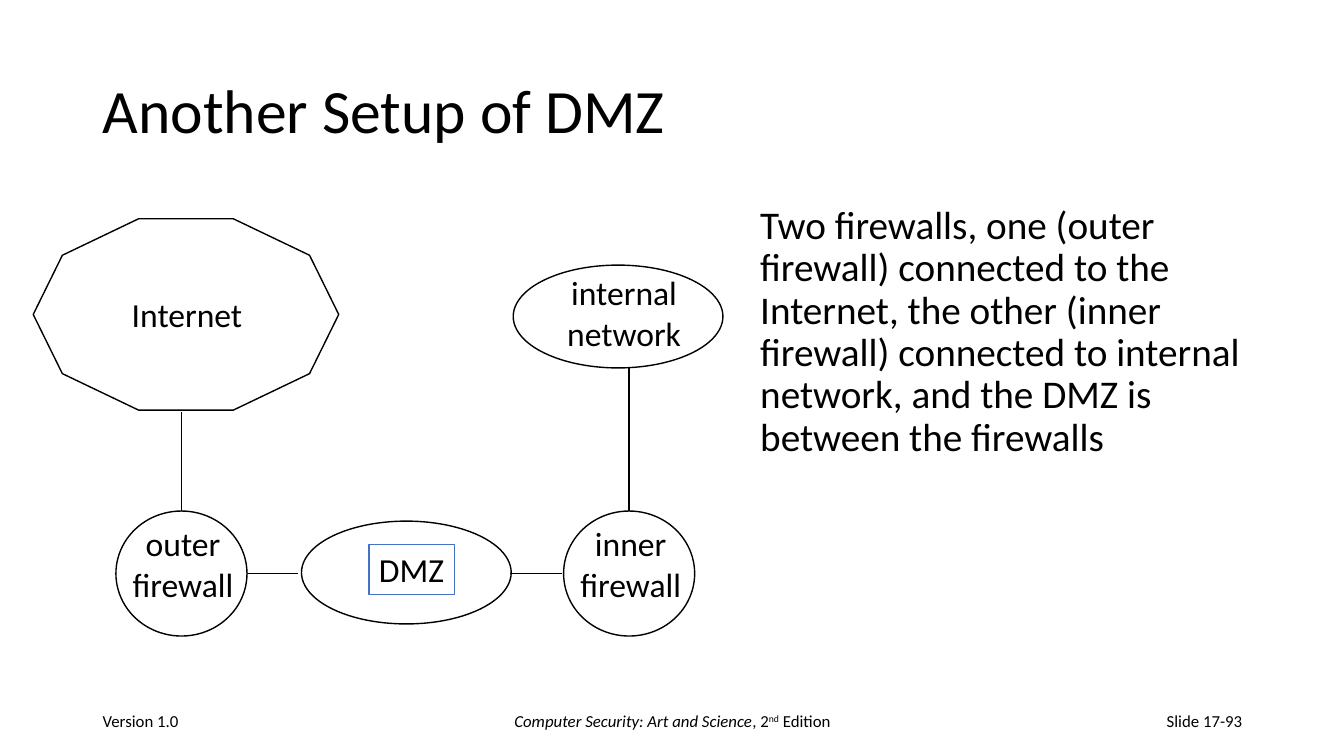
from lxml.etree import SubElement
from pptx import Presentation
from pptx.dml.color import RGBColor
from pptx.enum.shapes import MSO_CONNECTOR, MSO_SHAPE
from pptx.enum.text import MSO_ANCHOR as ANCHOR, MSO_AUTO_SIZE as AUTO, PP_ALIGN as ALIGN
from pptx.oxml.ns import qn
from pptx.util import Pt

EMU_PER_PX = 9144
BLACK = "000000"
BLUE = "4472C4"


def px(*lengths):
    return [length * EMU_PER_PX for length in lengths]


def color(value):
    return RGBColor.from_string(value)


def write(shape, paragraphs, size=24, align=ALIGN.LEFT, anchor=ANCHOR.TOP,
          wrap=False, spacing=1.0, fit=AUTO.NONE):
    frame = shape.text_frame
    frame.word_wrap = wrap
    frame.auto_size = fit
    frame.vertical_anchor = anchor
    for index, runs in enumerate(paragraphs):
        paragraph = frame.add_paragraph() if index else frame.paragraphs[0]
        properties = paragraph._p.get_or_add_pPr()
        properties.set("marL", "0")
        properties.set("indent", "0")
        SubElement(properties, qn("a:buNone"))
        paragraph.alignment = align
        paragraph.line_spacing = spacing
        paragraph.space_before = Pt(0)
        for words, style in [(runs, "")] if isinstance(runs, str) else runs:
            run = paragraph.add_run()
            run.text = words
            run.font.name = "Calibri"
            run.font.size = Pt(size)
            run.font.color.rgb = color(BLACK)
            run.font.italic = style == "italic"
            if style == "super":
                run._r.get_or_add_rPr().set("baseline", "30000")


def place(shape, box):
    shape.left, shape.top, shape.width, shape.height = px(*box)
    return shape


def add_text(slide, box, paragraphs, **style):
    write(slide.shapes.add_textbox(*px(*box)), paragraphs, **style)


def add_outline(slide, kind, box, line=BLACK, width=1):
    shape = slide.shapes.add_shape(kind, *px(*box))
    shape.shadow.inherit = False
    shape.fill.background()
    shape.line.color.rgb = color(line)
    shape.line.width = Pt(width)
    return shape


def add_link(slide, *ends):
    link = slide.shapes.add_connector(MSO_CONNECTOR.STRAIGHT, *px(*ends))
    link.line.color.rgb = color(BLACK)
    link.line.width = Pt(1)
    SubElement(link._element.spPr, qn("a:effectLst"))


def add_heading(slide, box):
    write(place(slide.shapes.title, box), ["Another Setup of DMZ"], size=44,
          anchor=ANCHOR.MIDDLE, wrap=True, spacing=0.9)


def add_explanation(slide, box):
    write(place(slide.placeholders[1], box),
          ["Two firewalls, one (outer firewall) connected to the Internet, "
           "the other (inner firewall) connected to internal network, "
           "and the DMZ is between the firewalls"],
          size=28, wrap=True, spacing=0.9)


def add_network(slide, box):
    left, top, width, height = box
    firewall_top = top + 290
    outer_left, inner_left = left + 82, left + 526
    link_y = firewall_top + 62
    label = dict(align=ALIGN.CENTER, fit=AUTO.SHAPE_TO_FIT_TEXT)

    add_outline(slide, MSO_SHAPE.DECAGON, (left, top, 303, 190))
    add_text(slide, (left + 87, top + 70, 131, 50), ["Internet"], **label)
    add_outline(slide, MSO_SHAPE.OVAL, (left + 476, top + 46, 208, 102))
    add_text(slide, (left + 519, top + 48, 134, 91), ["internal", "network"], **label)

    for firewall_left, role in ((outer_left, "outer"), (inner_left, "inner")):
        add_outline(slide, MSO_SHAPE.OVAL, (firewall_left, firewall_top, 130, 124))
        add_text(slide, (firewall_left + 6, firewall_top + 7, 121, 91),
                 [role, "firewall"], **label)

    add_outline(slide, MSO_SHAPE.OVAL, (left + 266, firewall_top + 10, 208, 102))
    dmz = add_outline(slide, MSO_SHAPE.RECTANGLE,
                      (left + 333, firewall_top + 33, 85, 50), BLUE, 0.75)
    write(dmz, ["DMZ"], fit=AUTO.SHAPE_TO_FIT_TEXT)

    for firewall_left, link_top in ((outer_left, top + 192), (inner_left, top + 148)):
        center = firewall_left + 65
        add_link(slide, center, link_top, center, firewall_top)
    for link_left in (outer_left + 130, left + 473):
        add_link(slide, link_left, link_y, link_left + 51, link_y)


def add_footer(slide, box):
    left, top, width, height = box
    edition = [("Computer Security: Art and Science", "italic"), (", 2", ""),
               ("nd", "super"), (" Edition", "")]
    for offset, part_width, words, align in (
            (0, 300, "Version 1.0", ALIGN.LEFT),
            (350, 450, edition, ALIGN.CENTER),
            (width - 300, 300, "Slide 17-93", ALIGN.RIGHT)):
        add_text(slide, (left + offset, top, part_width, height), [words],
                 size=12, align=align, anchor=ANCHOR.MIDDLE, wrap=True)


def main():
    deck = Presentation()
    deck.slide_width, deck.slide_height = px(1333, 750)
    slide = deck.slides.add_slide(deck.slide_layouts[1])
    add_heading(slide, (92, 40, 1150, 145))
    add_explanation(slide, (744, 199, 510, 476))
    add_footer(slide, (92, 695, 1150, 40))
    add_network(slide, (33, 217, 684, 414))
    deck.save("out.pptx")


if __name__ == "__main__":
    main()
